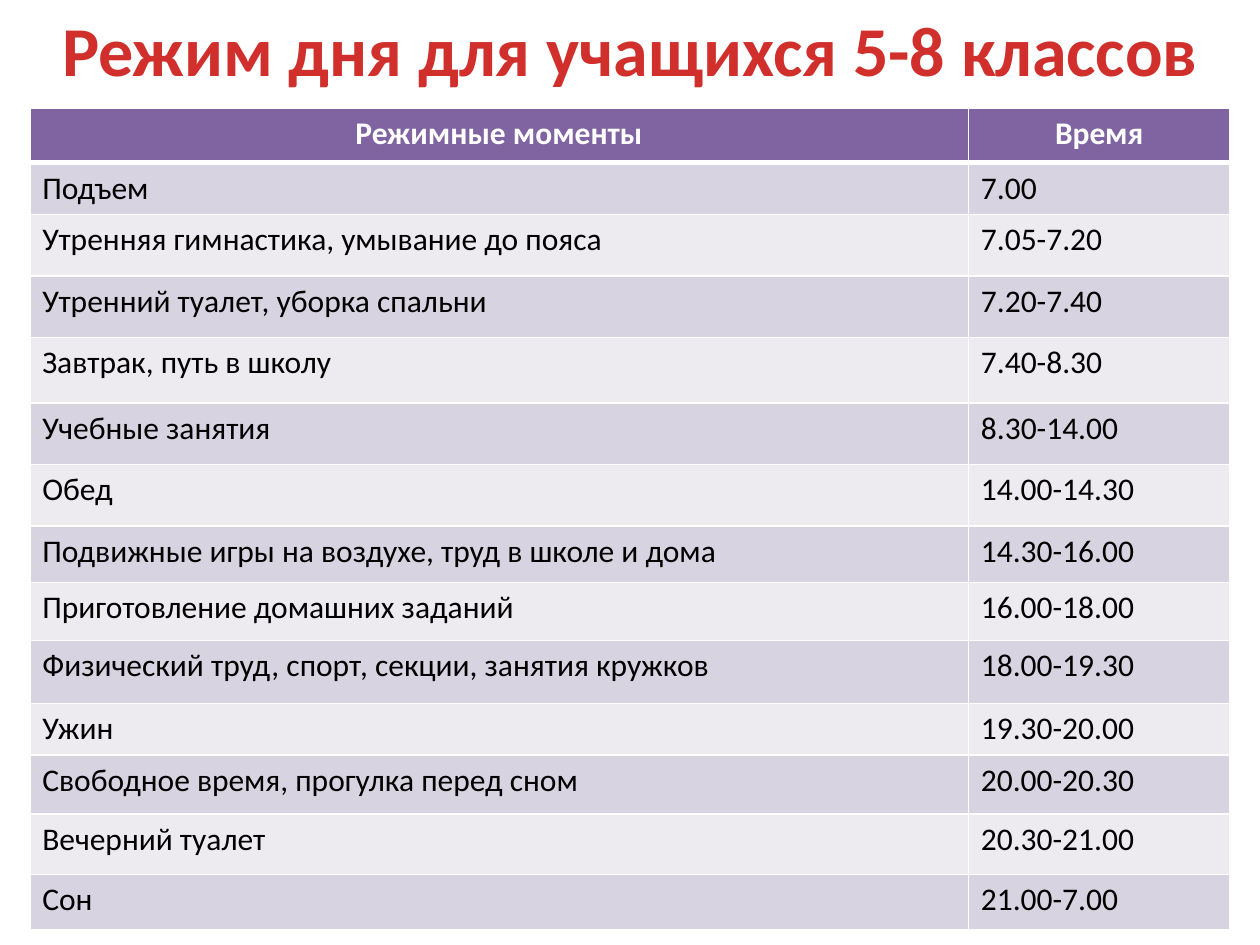
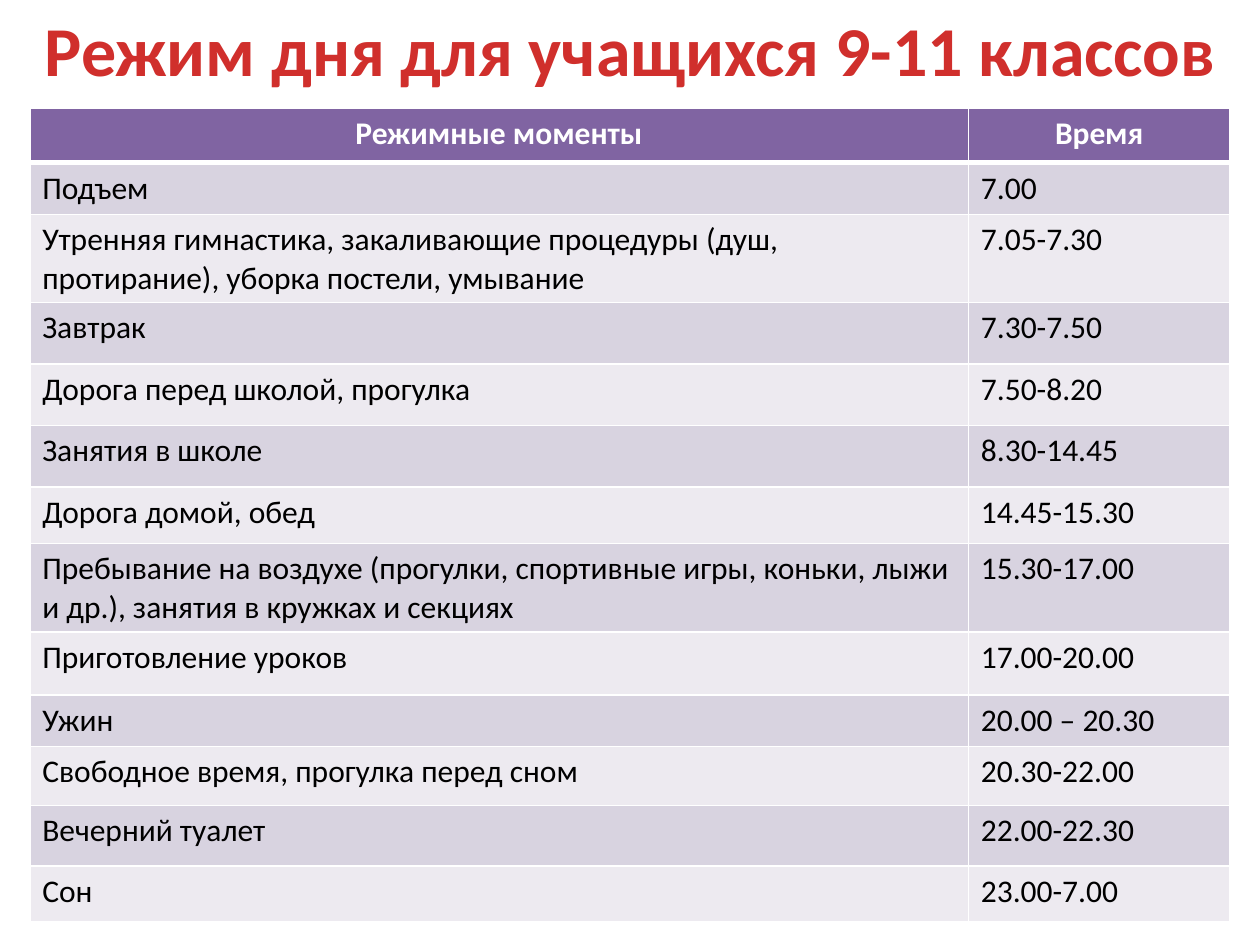
from lxml.etree import SubElement as Sub
from pptx import Presentation
from pptx.dml.color import RGBColor
from pptx.enum.text import MSO_AUTO_SIZE as Auto, PP_ALIGN as Align
from pptx.oxml.ns import qn
from pptx.util import Cm, Pt

FONT = "Calibri"
RED = RGBColor(0xD0, 0x2F, 0x2C)
PURPLE = RGBColor(0x80, 0x64, 0xA2)
DARK = RGBColor(0xD8, 0xD3, 0xE0)
LIGHT = RGBColor(0xED, 0xEA, 0xF0)
WHITE = RGBColor(0xFF, 0xFF, 0xFF)
BLACK = RGBColor(0, 0, 0)

WIDTHS = 18.92, 5.28
HEAD = ("Режимные моменты", "Время", 1.09)

# Each row: activity, time, height in cm
DAYS = {
    "5-8": [
        ("Подъем", "7.00", 1.04),
        ("Утренняя гимнастика, умывание до пояса", "7.05-7.20", 1.24),
        ("Утренний туалет, уборка спальни", "7.20-7.40", 1.24),
        ("Завтрак, путь в школу", "7.40-8.30", 1.32),
        ("Учебные занятия", "8.30-14.00", 1.24),
        ("Обед", "14.00-14.30", 1.24),
        ("Подвижные игры на воздухе, труд в школе и дома", "14.30-16.00", 1.14),
        ("Приготовление домашних заданий", "16.00-18.00", 1.17),
        ("Физический труд, спорт, секции, занятия кружков", "18.00-19.30", 1.27),
        ("Ужин", "19.30-20.00", 1.04),
        ("Свободное время, прогулка перед сном", "20.00-20.30", 1.19),
        ("Вечерний туалет", "20.30-21.00", 1.22),
        ("Сон", "21.00-7.00", 1.12),
    ],
    "9-11": [
        ("Подъем", "7.00", 1.04),
        ("Утренняя гимнастика, закаливающие процедуры (душ, протирание), "
         "уборка постели, умывание", "7.05-7.30", 1.78),
        ("Завтрак", "7.30-7.50", 1.24),
        ("Дорога перед школой, прогулка", "7.50-8.20", 1.24),
        ("Занятия в школе", "8.30-14.45", 1.24),
        ("Дорога домой, обед", "14.45-15.30", 1.14),
        ("Пребывание на воздухе (прогулки, спортивные игры, коньки, лыжи "
         "и др.), занятия в кружках и секциях", "15.30-17.00", 1.78),
        ("Приготовление уроков", "17.00-20.00", 1.27),
        ("Ужин", "20.00 – 20.30", 1.04),
        ("Свободное время, прогулка перед сном", "20.30-22.00", 1.19),
        ("Вечерний туалет", "22.00-22.30", 1.22),
        ("Сон", "23.00-7.00", 1.12),
    ],
}


def style(par, size, color, bold, align):
    par.alignment = align
    font = par.font
    font.name, font.size, font.bold = FONT, Pt(size), bold
    font.color.rgb = color


def edge(cell, top, bottom):
    """Draw white cell borders; top and bottom widths are in points."""
    props = cell._tc.get_or_add_tcPr()
    for side, width in zip("LRTB", (1, 1, top, bottom)):
        line = Sub(props, qn(f"a:ln{side}"), w=str(Pt(width)))
        Sub(Sub(line, qn("a:solidFill")), qn("a:srgbClr"), val=str(WHITE))


prs = Presentation()
prs.slide_width, prs.slide_height = Cm(25.4), Cm(19.05)

for grades, day in DAYS.items():
    slide = prs.slides.add_slide(prs.slide_layouts[6])
    rows = [HEAD] + day
    table = slide.shapes.add_table(
        len(rows), 2, Cm(0.6), Cm(2.19), Cm(sum(WIDTHS)),
        Cm(sum(row[2] for row in rows))).table
    for col, width in zip(table.columns, WIDTHS):
        col.width = Cm(width)

    for i, (*texts, height) in enumerate(rows):
        table.rows[i].height = Cm(height)
        head = i == 0
        for j, text in enumerate(texts):
            cell = table.cell(i, j)
            edge(cell, 3 if i == 1 else 1, 3 if head else 1)
            cell.fill.solid()
            cell.fill.fore_color.rgb = PURPLE if head else DARK if i % 2 else LIGHT
            cell.text = text
            style(cell.text_frame.paragraphs[0], 18, WHITE if head else BLACK,
                  head, Align.CENTER if head else Align.LEFT)

    title = slide.shapes.add_textbox(0, 0, prs.slide_width, Cm(1.96)).text_frame
    title.word_wrap = True
    title.auto_size = Auto.SHAPE_TO_FIT_TEXT
    title.text = f"Режим дня для учащихся {grades} классов"
    style(title.paragraphs[0], 40, RED, True, Align.CENTER)

prs.save("out.pptx")
